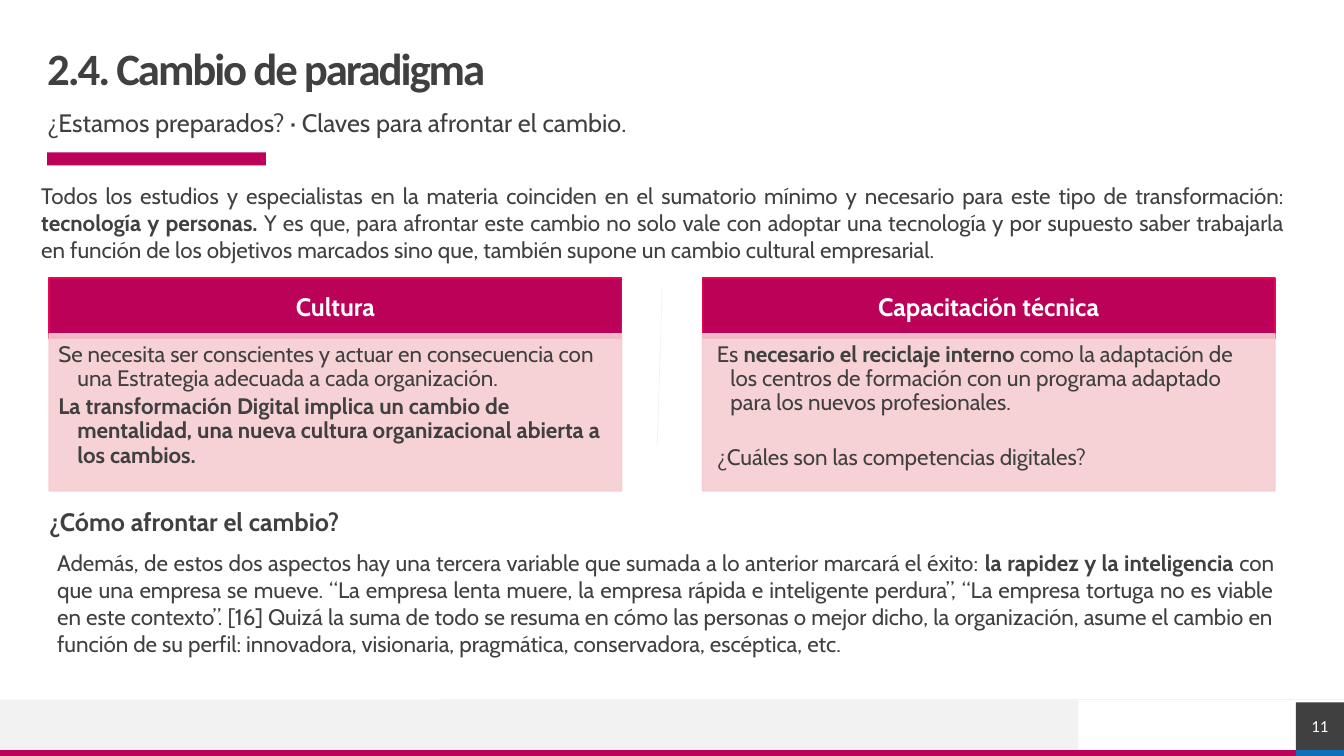
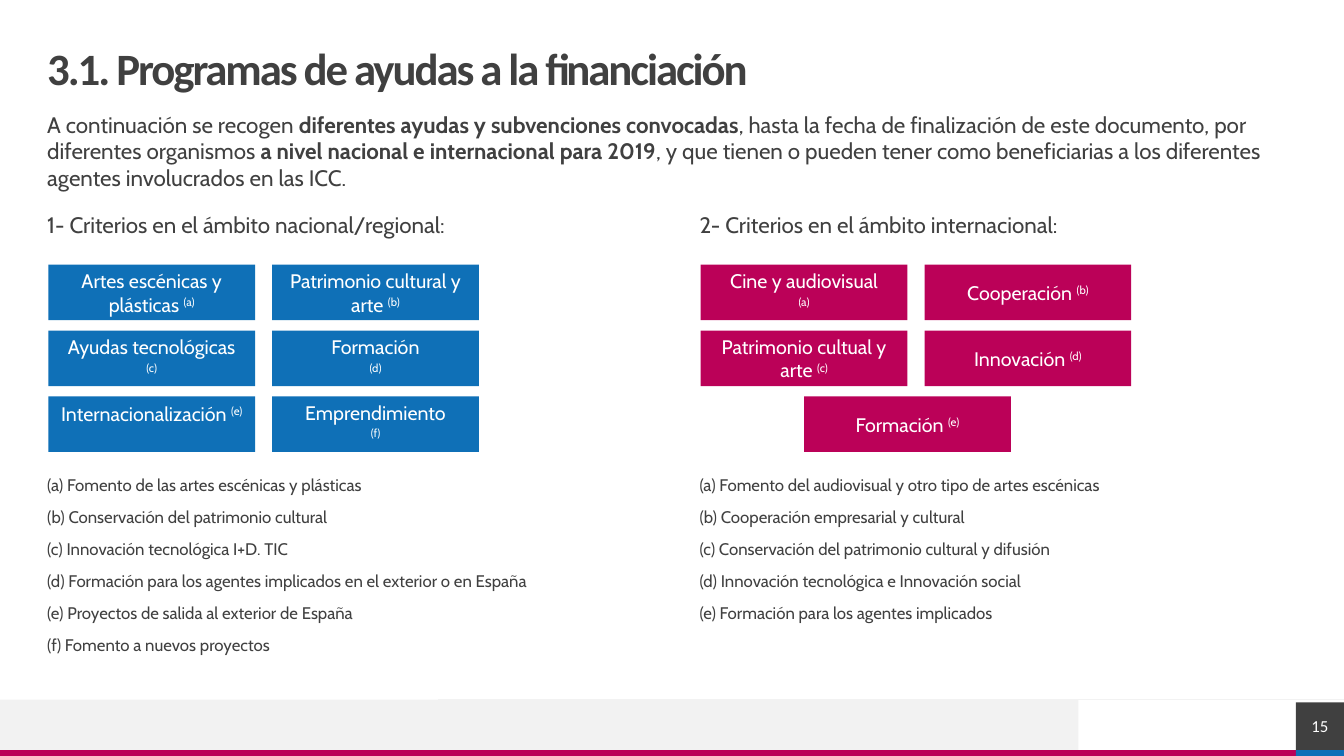
from dataclasses import dataclass

from lxml import etree
from pptx import Presentation
from pptx.dml.color import RGBColor
from pptx.enum.shapes import MSO_CONNECTOR, MSO_SHAPE
from pptx.enum.text import MSO_ANCHOR as ANCHOR, MSO_AUTO_SIZE, PP_ALIGN as ALIGN
from pptx.oxml.ns import qn
from pptx.util import Cm, Pt


@dataclass(frozen=True)
class Theme:
    head_font: str = "Calibri"
    body_font: str = "Cabin"
    ink: str = "404040"
    white: str = "FFFFFF"
    crimson: str = "BB0158"
    outline: str = "E80554"
    pink: str = "F6CCD1"
    blue: str = "0F70B7"
    grey: str = "F2F2F2"
    title: int = 32
    heading: int = 18
    text: int = 16
    box: int = 14
    small: int = 12


T = Theme()
MARGIN = 1.19
WIDTH, HEIGHT = 33.87, 19.05
BAND_TOP = 18.9


# Text: *bold* and ^superscript^ mark the runs
def add_runs(p, text, size, color, font, bold, tracking):
    for i, part in enumerate(text.split("*")):
        for j, piece in enumerate(part.split("^")):
            if not piece:
                continue
            r = p.add_run()
            r.text = piece
            r.font.name, r.font.size = font, Pt(size)
            r.font.bold = bold or i % 2 == 1
            r.font.color.rgb = RGBColor.from_string(color)
            if j % 2:
                r.font._element.set("baseline", "30000")
            if tracking:
                r.font._element.set("spc", str(tracking))


def write(shape, *paragraphs, size=T.text, color=T.ink, font=T.body_font,
          bold=False, align=ALIGN.LEFT, anchor=ANCHOR.TOP, spacing=1.0,
          gap=0, hanging=0, first=0, tracking=0, insets=(0, 0, 0, 0)):
    tf = shape.text_frame
    tf.word_wrap = True
    tf.auto_size = MSO_AUTO_SIZE.NONE
    tf.vertical_anchor = anchor
    (tf.margin_left, tf.margin_top,
     tf.margin_right, tf.margin_bottom) = map(Cm, insets)
    for i, text in enumerate(paragraphs):
        p = tf.add_paragraph() if i else tf.paragraphs[0]
        pPr = p._p.get_or_add_pPr()
        pPr.set("marL", str(Cm(hanging)))
        pPr.set("indent", str(Cm(first)))
        etree.SubElement(pPr, qn("a:buNone"))
        p.alignment, p.line_spacing = align, spacing
        p.space_before, p.space_after = Pt(gap if i else 0), Pt(0)
        add_runs(p, text, size, color, font, bold, tracking)


def place(shape, x, y, w, h):
    shape.left, shape.top, shape.width, shape.height = map(Cm, (x, y, w, h))
    return shape


def add_text(s, x, y, w, h, *paragraphs, **fmt):
    write(s.shapes.add_textbox(Cm(x), Cm(y), Cm(w), Cm(h)), *paragraphs, **fmt)


# Shapes and lines
def set_alpha(color_format_owner, percent):
    for color in color_format_owner.iter(qn("a:srgbClr")):
        etree.SubElement(color, qn("a:alpha")).set("val", str(percent * 1000))


def add_rect(s, x, y, w, h, fill, line=None, alpha=None):
    sp = s.shapes.add_shape(MSO_SHAPE.RECTANGLE, Cm(x), Cm(y), Cm(w), Cm(h))
    sp.shadow.inherit = False
    sp.fill.solid()
    sp.fill.fore_color.rgb = RGBColor.from_string(fill)
    if line:
        sp.line.color.rgb = RGBColor.from_string(line)
        sp.line.width = Pt(1)
    else:
        sp.line.fill.background()
    if alpha:
        set_alpha(sp._element.spPr, alpha)
    return sp


def add_line(s, x1, y1, x2, y2):
    line = s.shapes.add_connector(MSO_CONNECTOR.STRAIGHT,
                                  Cm(x1), Cm(y1), Cm(x2), Cm(y2))
    line.line.color.rgb = RGBColor.from_string(T.grey)
    line.line.width = Pt(0.5)
    etree.SubElement(line._element.spPr, qn("a:effectLst"))


# Frame shared by the slides
def new_slide(prs, title, number):
    s = prs.slides.add_slide(prs.slide_layouts[1])
    add_rect(s, 0, 17.63, 27.18, 1.27, T.grey)
    add_rect(s, 0, BAND_TOP, 32.66, HEIGHT - BAND_TOP, T.crimson)
    add_rect(s, 32.66, BAND_TOP, WIDTH - 32.66, HEIGHT - BAND_TOP, T.blue)
    add_line(s, 11.05, 17.63, WIDTH, 17.63)
    page = add_rect(s, 32.66, 17.7, WIDTH - 32.66, 1.2, T.ink)
    write(page, number, size=T.small, color=T.white, font=T.head_font,
          align=ALIGN.CENTER, anchor=ANCHOR.MIDDLE)
    write(place(s.shapes.title, MARGIN, 1.19, 31.5, 1.19), title,
          size=T.title, font=T.head_font, bold=True, anchor=ANCHOR.MIDDLE,
          spacing=0.9, tracking=-150)
    return s


def add_card(s, x, title, *paragraphs, **fmt):
    y, w = 7.01, 14.43
    head = add_rect(s, x, y, w, 1.52, T.crimson, line=T.outline)
    write(head, title, size=T.heading, color=T.white, bold=True, spacing=0.9,
          align=ALIGN.CENTER, anchor=ANCHOR.MIDDLE)
    body = add_rect(s, x, y + 1.4, w, 3.96, T.pink, line=T.pink, alpha=90)
    write(body, *paragraphs, spacing=0.9, hanging=0.48,
          insets=(0.23, 0.23, 0.3, 0.36), **fmt)


def add_label(s, x, y, fill, lines, anchor=ANCHOR.MIDDLE):
    write(add_rect(s, x, y, BOX_W, 1.4, fill), *lines, size=T.box,
          color=T.white, align=ALIGN.CENTER, anchor=anchor,
          insets=(0.25, 0.13, 0.25, 0.13))


# Heading, two-column grid of labels and notes
BOX_W, COL_STEP, ROW_STEP, GRID_TOP = 5.21, 5.64, 1.66, 6.67


def add_criteria(s, x, fill, heading, labels, notes):
    add_text(s, x, 5.4, 14.45, 0.99, heading, spacing=0.9)
    for i, lines in enumerate(labels):
        row, col = divmod(i, 2)
        alone = col == 0 and i == len(labels) - 1
        left = x + 0.03 + (BOX_W / 2 if alone else col * COL_STEP)
        top_line = lines[0].startswith("Internacionalización")
        add_label(s, left, GRID_TOP + row * ROW_STEP, fill, lines,
                  anchor=ANCHOR.TOP if top_line else ANCHOR.MIDDLE)
    add_text(s, x, 12.01, 14.45, 4.8, *notes, size=T.small, spacing=0.9, gap=10)


def paradigm_slide(prs):
    s = new_slide(prs, "2.4. Cambio de paradigma", "11")
    write(place(s.placeholders[1], MARGIN, 2.79, 31.5, 0.99),
          "¿Estamos preparados? · Claves para afrontar el cambio.",
          size=T.heading, spacing=0.9)
    add_rect(s, MARGIN, 3.84, 5.51, 0.33, T.crimson)
    add_text(s, 1.04, 4.6, 31.34, 2,
             "Todos los estudios y especialistas en la materia coinciden en el "
             "sumatorio mínimo y necesario para este tipo de transformación: "
             "*tecnología y personas.* Y es que, para afrontar este cambio no "
             "solo vale con adoptar una tecnología y por supuesto saber "
             "trabajarla en función de los objetivos marcados sino que, también "
             "supone un cambio cultural empresarial.", align=ALIGN.JUSTIFY)
    add_card(s, 1.24, "Cultura",
             "Se necesita ser conscientes y actuar en consecuencia con una "
             "Estrategia adecuada a cada organización.",
             "*La transformación Digital implica un cambio de mentalidad, una "
             "nueva cultura organizacional abierta a los cambios.*",
             first=-0.48, gap=3)
    add_line(s, 16.69, 7.26, 16.56, 11.25)
    add_card(s, 17.7, "Capacitación técnica",
             "Es *necesario el reciclaje interno* como la adaptación de los "
             "centros de formación con un programa adaptado para los nuevos "
             "profesionales.",
             "¿Cuáles son las competencias digitales?",
             first=-0.34, gap=22)
    add_text(s, 1.24, 12.85, 14.86, 0.99, "¿Cómo afrontar el cambio?",
             size=T.heading, bold=True, spacing=0.9)
    add_text(s, MARGIN, 13.72, 31.17, 3,
             "Además, de estos dos aspectos hay una tercera variable que sumada "
             "a lo anterior marcará el éxito: *la rapidez y la inteligencia* con "
             "que una empresa se mueve. “La empresa lenta muere, la empresa "
             "rápida e inteligente perdura”, “La empresa tortuga no es viable en "
             "este contexto”. [16] Quizá la suma de todo se resuma en cómo las "
             "personas o mejor dicho, la organización, asume el cambio en "
             "función de su perfil: innovadora, visionaria, pragmática, "
             "conservadora, escéptica, etc.",
             align=ALIGN.JUSTIFY, insets=(0.25, 0.13, 0.25, 0.13))


def funding_slide(prs):
    s = new_slide(prs, "3.1. Programas de ayudas a la financiación", "15")
    write(place(s.placeholders[1], MARGIN, 2.79, 31.5, 2.01),
          "A continuación se recogen *diferentes ayudas y subvenciones "
          "convocadas*, hasta la fecha de finalización de este documento, por "
          "diferentes organismos *a nivel nacional e internacional para 2019*, "
          "y que tienen o pueden tener como beneficiarias a los diferentes "
          "agentes involucrados en las ICC.")
    add_criteria(
        s, MARGIN, T.blue, "1- Criterios en el ámbito nacional/regional:",
        [["Artes escénicas y plásticas ^(a)^"],
         ["Patrimonio cultural y arte ^(b)^"],
         ["Ayudas tecnológicas", "^(c)^"],
         ["Formación", "^(d)^"],
         ["Internacionalización ^(e)^"],
         ["Emprendimiento", "^(f)^"]],
        ["(a) Fomento de las artes escénicas y plásticas",
         "(b) Conservación del patrimonio cultural",
         "(c) Innovación tecnológica I+D. TIC",
         "(d) Formación para los agentes implicados en el exterior o en España",
         "(e) Proyectos de salida al exterior de España",
         "(f) Fomento a nuevos proyectos"])
    add_criteria(
        s, 17.63, T.crimson, "2- Criterios en el ámbito internacional:",
        [["Cine y audiovisual", "^(a)^"],
         ["Cooperación ^(b)^"],
         ["Patrimonio cultual y arte ^(c)^"],
         ["Innovación ^(d)^"],
         ["Formación ^(e)^"]],
        ["(a) Fomento del audiovisual y otro tipo de artes escénicas",
         "(b) Cooperación empresarial y cultural",
         "(c) Conservación del patrimonio cultural y difusión",
         "(d) Innovación tecnológica e Innovación social",
         "(e) Formación para los agentes implicados"])


def main():
    prs = Presentation()
    prs.slide_width, prs.slide_height = Cm(WIDTH), Cm(HEIGHT)
    paradigm_slide(prs)
    funding_slide(prs)
    prs.save("out.pptx")


if __name__ == "__main__":
    main()
